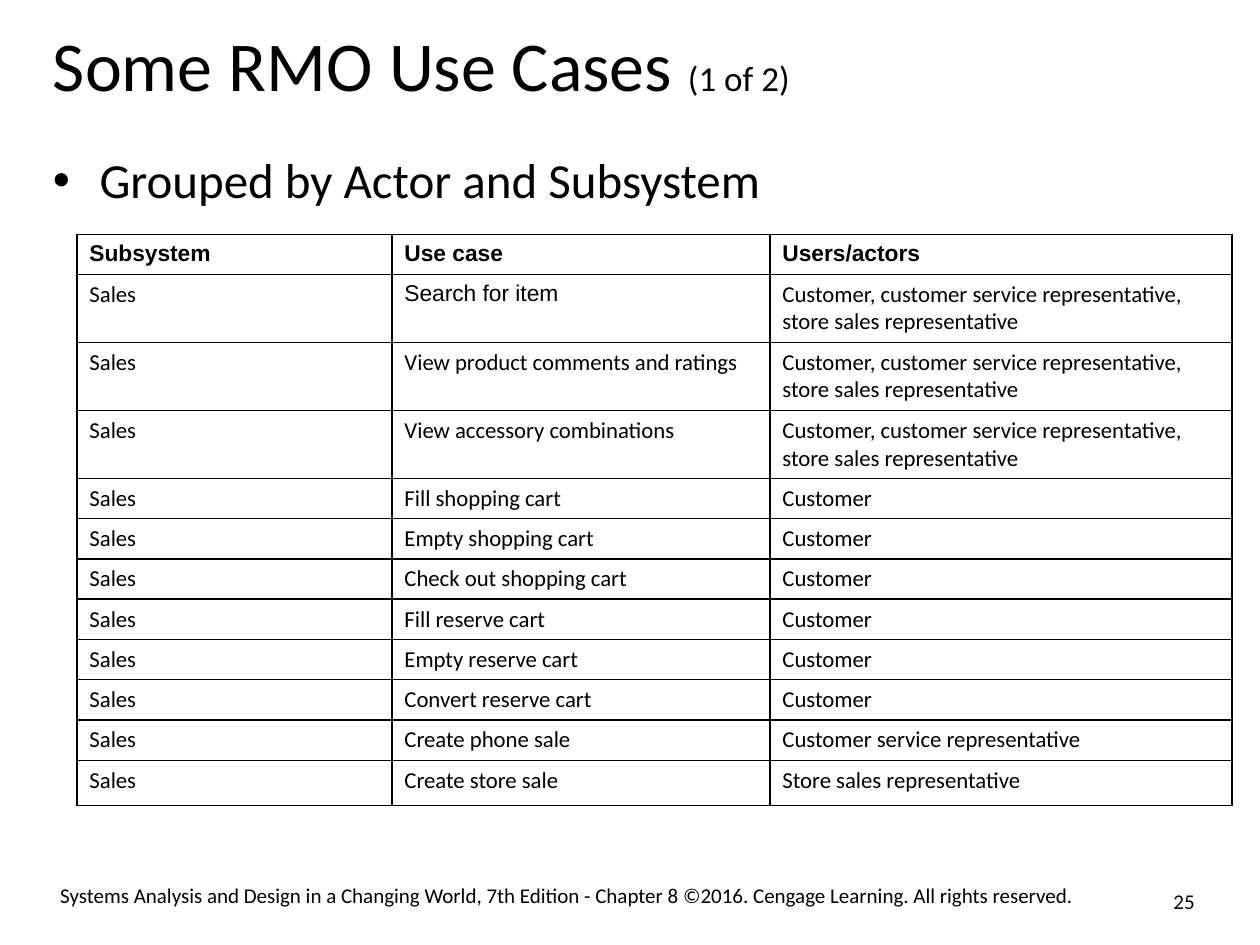
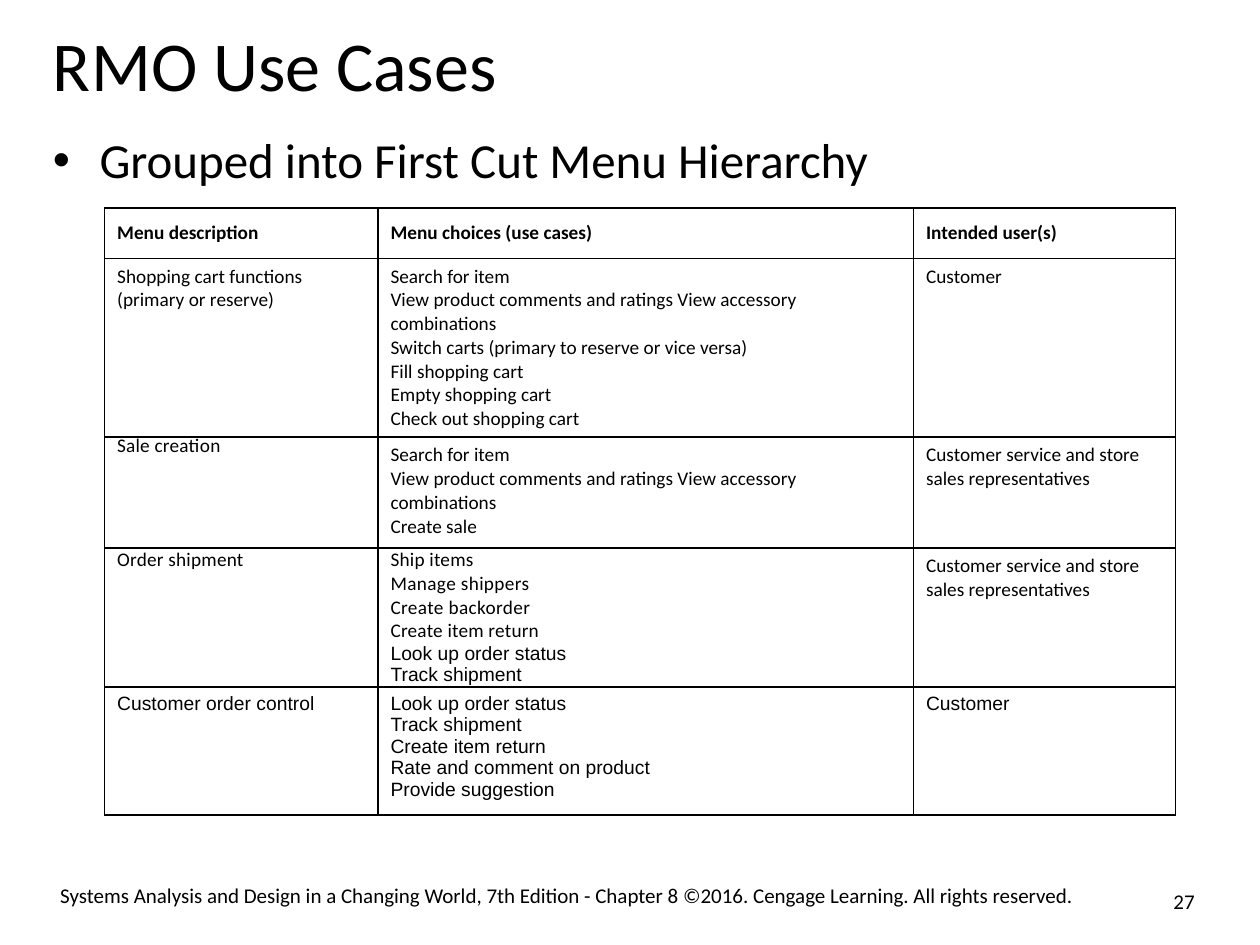
from dataclasses import dataclass

from lxml import etree
from pptx import Presentation
from pptx.dml.color import RGBColor
from pptx.enum.text import MSO_ANCHOR, MSO_AUTO_SIZE, PP_ALIGN
from pptx.oxml.ns import qn
from pptx.util import Inches, Pt

TOP, MIDDLE = MSO_ANCHOR.TOP, MSO_ANCHOR.MIDDLE
LEFT, RIGHT = PP_ALIGN.LEFT, PP_ALIGN.RIGHT
NO_AUTOFIT = MSO_AUTO_SIZE.NONE
TITLE_ONLY = 5
INK, PAPER = "000000", "FFFFFF"
BODY_FONT, ALT_FONT = "Calibri", "Arial"
TITLE_BOX = (0.42, 0.25, 9.17, 0.61)
FOOTER_BOX = (0.38, 6.98, 8.54, 0.27)
NUMBER_BOX = (9.08, 6.95, 0.5, 0.4)
FOOTER = ("Systems Analysis and Design in a Changing World, 7th Edition - Chapter 8 "
          "©2016. Cengage Learning. All rights reserved.")


@dataclass
class Line:
    """A table line with its font, letter spacing and line spacing."""
    text: str
    font: str = BODY_FONT
    tracking: float = 0
    spacing: float = 1.0


def color(hex_code):
    """Turn a hex string into a colour."""
    return RGBColor.from_string(hex_code)


def add_run(paragraph, text, size, font=BODY_FONT, bold=False, tracking=0):
    """Add one formatted run."""
    run = paragraph.add_run()
    run.text = text
    run.font.size, run.font.name, run.font.bold = Pt(size), font, bold
    run.font.color.rgb = color(INK)
    if tracking:
        run._r.get_or_add_rPr().set("spc", str(round(tracking * 100)))


def set_margins(holder, side, top):
    """Set side and top/bottom margins of a frame or cell."""
    holder.margin_left = holder.margin_right = Inches(side)
    holder.margin_top = holder.margin_bottom = Inches(top)


def add_text(slide, box, text, size, side=0.1, top=0.05, anchor=TOP, align=LEFT, spacing=0.9):
    """Add a one-paragraph text box and return its paragraph."""
    frame = slide.shapes.add_textbox(*map(Inches, box)).text_frame
    frame.word_wrap = True
    frame.vertical_anchor = anchor
    set_margins(frame, side, top)
    paragraph = frame.paragraphs[0]
    paragraph.alignment, paragraph.line_spacing = align, spacing
    add_run(paragraph, text, size)
    return paragraph


def fill_title(slide, title_runs):
    """Place the title and write its runs."""
    title = slide.shapes.title
    title.left, title.top, title.width, title.height = map(Inches, TITLE_BOX)
    frame = title.text_frame
    frame.auto_size, frame.vertical_anchor, frame.word_wrap = NO_AUTOFIT, TOP, True
    set_margins(frame, 0, 0)
    paragraph = frame.paragraphs[0]
    paragraph.alignment, paragraph.line_spacing = LEFT, 0.9
    for text, size in title_runs:
        add_run(paragraph, text, size)


def add_bullet(slide, box, text):
    """Add the bulleted line above the table."""
    paragraph = add_text(slide, box, text, 28, side=0, top=0)
    properties = paragraph._p.get_or_add_pPr()
    indent = Inches(0.37)
    properties.set("marL", str(indent))
    properties.set("indent", str(-indent))
    etree.SubElement(properties, qn("a:buFont"), typeface=ALT_FONT)
    etree.SubElement(properties, qn("a:buChar"), char="•")


def add_borders(cell):
    """Draw a one-point line on all four sides of a cell."""
    properties = cell._tc.get_or_add_tcPr()
    for side in ("lnL", "lnR", "lnT", "lnB"):
        border = etree.SubElement(properties, qn(f"a:{side}"), w=str(Pt(1)))
        fill = etree.SubElement(border, qn("a:solidFill"))
        etree.SubElement(fill, qn("a:srgbClr"), val=INK)


def fill_cell(cell, lines, size, bold, anchor, tight):
    """Write the lines of a cell and format it."""
    add_borders(cell)
    cell.fill.solid()
    cell.fill.fore_color.rgb = color(PAPER)
    cell.vertical_anchor = anchor
    set_margins(cell, 0.1, 0 if tight else 0.05)
    frame = cell.text_frame
    for index, line in enumerate(lines):
        paragraph = frame.add_paragraph() if index else frame.paragraphs[0]
        paragraph.line_spacing = line.spacing
        add_run(paragraph, line.text, size, line.font, bold, line.tracking)


def as_lines(content):
    """Turn a string, a line or a mixed list into a list of lines."""
    items = content if isinstance(content, list) else [content]
    return [Line(item) if isinstance(item, str) else item for item in items]


def add_grid(slide, origin, widths, heights, rows, size, header_anchor=TOP, tight=()):
    """Add a ruled table with a bold header row."""
    extent = (sum(widths), sum(heights))
    table = slide.shapes.add_table(len(rows), len(widths), *map(Inches, origin + extent)).table
    table.first_row = table.horz_banding = False
    for column, width in zip(table.columns, widths):
        column.width = Inches(width)
    for r, (contents, height) in enumerate(zip(rows, heights)):
        table.rows[r].height = Inches(height)
        for c, content in enumerate(contents):
            header = r == 0
            fill_cell(table.cell(r, c), as_lines(content), size, header,
                      header_anchor if header else TOP, (r, c) in tight)


def start_slide(deck, title_runs, bullet_box, bullet, number):
    """Add a slide with title, bullet, footer and page number."""
    slide = deck.slides.add_slide(deck.slide_layouts[TITLE_ONLY])
    add_text(slide, FOOTER_BOX, FOOTER, 12)
    fill_title(slide, title_runs)
    add_bullet(slide, bullet_box, bullet)
    add_text(slide, NUMBER_BOX, number, 12, anchor=MIDDLE, align=RIGHT, spacing=1.0)
    return slide


def rmo_title(before, after):
    """Return title runs with hair spaces between the letters of RMO."""
    return [(before + "R", 40), (" ", 1), ("M", 40), (" ", 1), ("O" + after, 40)]


def build_actor_slide(deck):
    """Build the slide of use cases by actor and subsystem."""
    slide = start_slide(deck, rmo_title("Some ", " Use Cases ") + [("(1 of 2)", 20)],
                        (0.42, 1.24, 9.17, 0.43), "Grouped by Actor and Subsystem", "25")
    everyone = "Customer, customer service representative, store sales representative"
    use_cases = [
        (Line("Search for item", ALT_FONT), everyone),
        ("View product comments and ratings", everyone),
        ("View accessory combinations", everyone),
        ("Fill shopping cart", "Customer"),
        ("Empty shopping cart", "Customer"),
        ("Check out shopping cart", "Customer"),
        ("Fill reserve cart", "Customer"),
        ("Empty reserve cart", "Customer"),
        ("Convert reserve cart", "Customer"),
        ("Create phone sale", "Customer service representative"),
        ("Create store sale", "Store sales representative"),
    ]
    header = [Line(name, ALT_FONT) for name in ("Subsystem", "Use case", "Users/actors")]
    rows = [header] + [("Sales", use_case, actors) for use_case, actors in use_cases]
    heights = [0.3] + [0.54] * 3 + [0.32] * 7 + [0.36]
    add_grid(slide, (0.61, 1.86), (2.5, 3, 3.67), heights, rows, 13)


def build_menu_slide(deck):
    """Build the slide of use cases by menu."""
    slide = start_slide(deck, rmo_title("", " Use Cases"), (0.42, 1.08, 9.17, 0.37),
                        "Grouped into First Cut Menu Hierarchy", "27")
    browsing = ["Search for item",
                "View product comments and ratings View accessory combinations"]
    tracking_steps = [Line(text, ALT_FONT) for text in ("Look up order status", "Track shipment")]
    staff = "Customer service and store sales representatives"
    rows = [
        ("Menu description", "Menu choices (use cases)", "Intended user(s)"),
        ("Shopping cart functions (primary or reserve)",
         browsing + ["Switch carts (primary to reserve or vice versa)", "Fill shopping cart",
                     "Empty shopping cart", "Check out shopping cart"],
         "Customer"),
        (Line("Sale creation", tracking=0.1, spacing=0.82), browsing + ["Create sale"], staff),
        (Line("Order shipment", tracking=0.1),
         [Line("Ship items", tracking=0.1), Line("Manage shippers", tracking=0.2),
          Line("Create backorder", tracking=0.2),
          Line("Create item return", tracking=0.1)] + tracking_steps,
         staff),
        (Line("Customer order control", ALT_FONT),
         tracking_steps + [Line(text, ALT_FONT) for text in (
             "Create item return", "Rate and comment on product", "Provide suggestion")],
         Line("Customer", ALT_FONT)),
    ]
    add_grid(slide, (0.83, 1.65), (2.17, 4.25, 2.08), (0.4, 1.42, 0.88, 1.09, 0.95), rows, 11,
             header_anchor=MIDDLE, tight={(2, 0), (3, 0), (3, 1)})


def main():
    """Build and save the deck."""
    deck = Presentation()
    deck.slide_width, deck.slide_height = Inches(10), Inches(7.5)
    build_actor_slide(deck)
    build_menu_slide(deck)
    deck.save("out.pptx")


if __name__ == "__main__":
    main()
